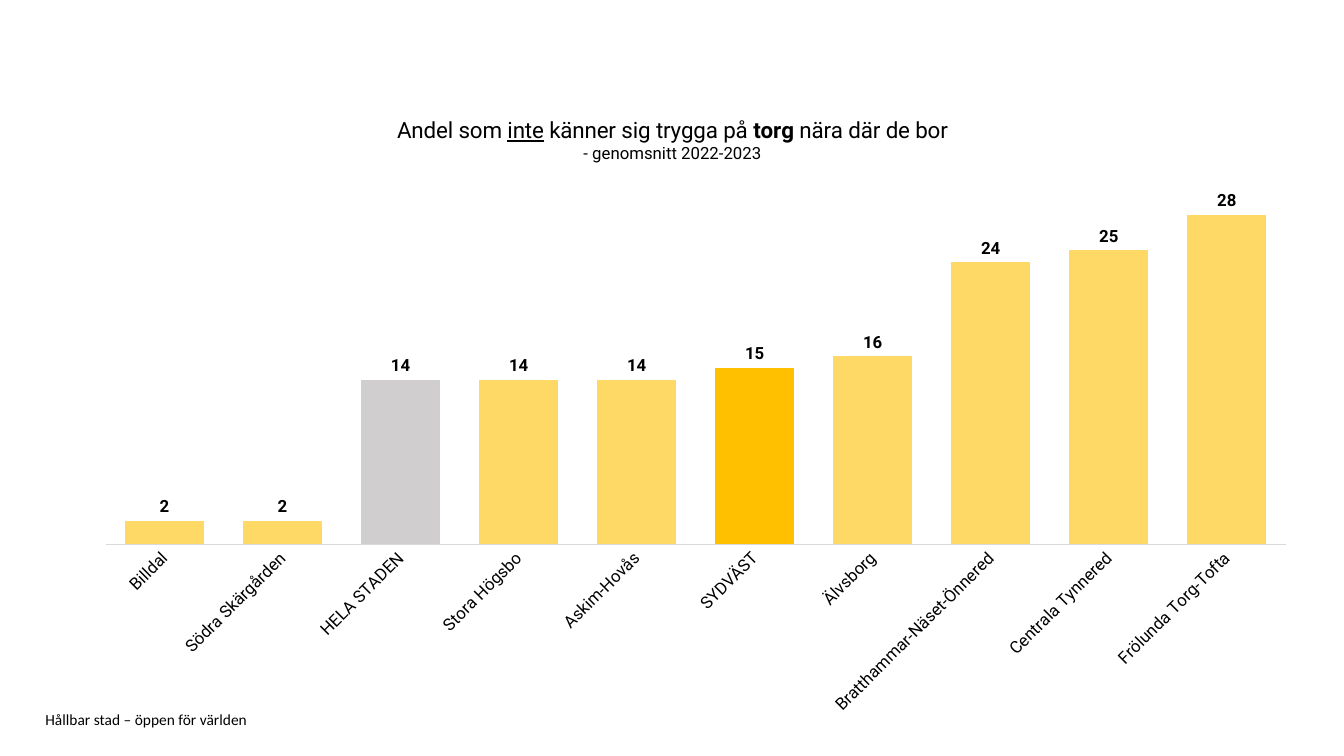
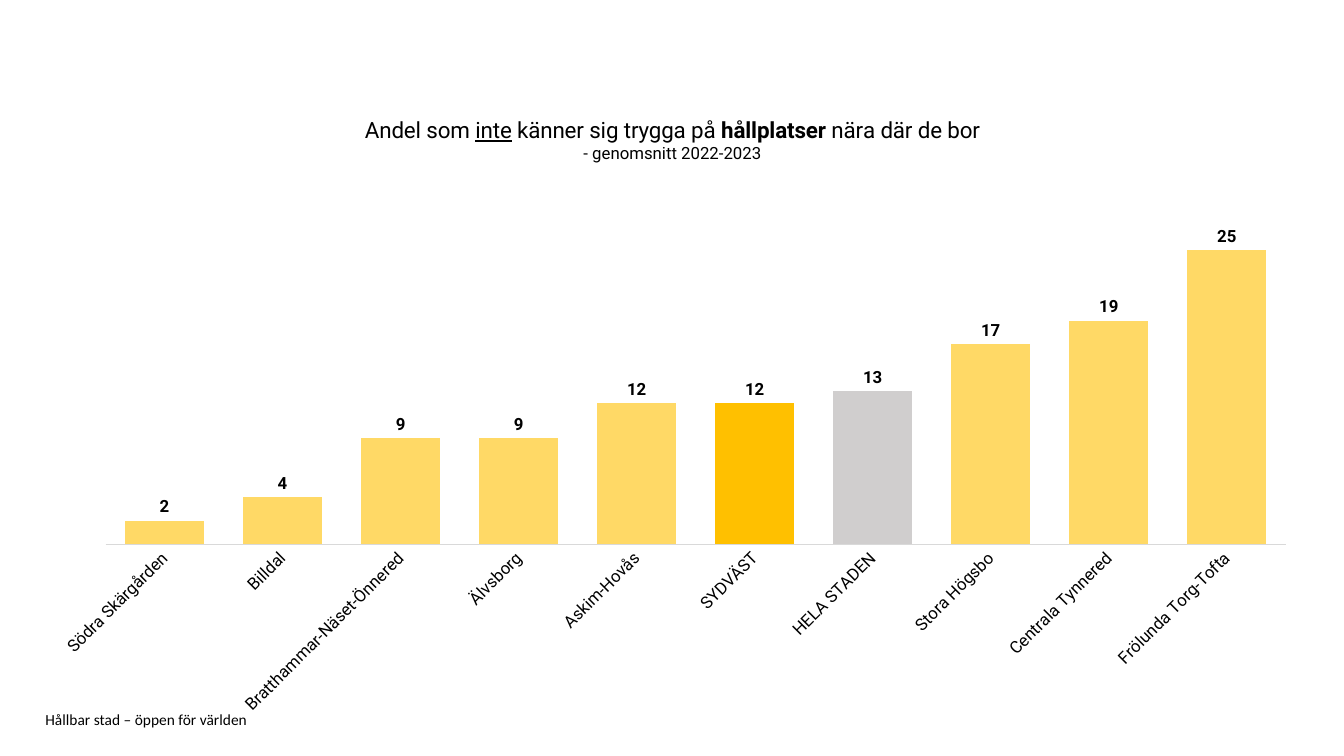
from lxml.etree import SubElement
from pptx import Presentation
from pptx.chart.data import CategoryChartData
from pptx.dml.color import RGBColor
from pptx.enum.chart import XL_CHART_TYPE, XL_LABEL_POSITION, XL_TICK_MARK
from pptx.enum.text import MSO_ANCHOR
from pptx.oxml.ns import qn
from pptx.util import Inches, Pt

COLORS = {"text": "000000", "axis": "D9D9D9", "area": "FFD966",
          "SYDVÄST": "FFC000", "HELA STADEN": "D0CECE"}
CHART_FONT = "Roboto"
FOOTER = "Hållbar stad – öppen för världen"
PERIOD = "- genomsnitt 2022-2023"
CHART_BOX = (0.45, 0.95, 12.44, 6.26)
PLOT_BOX = (0.6, 0.95, 11.7, 3.5)
FOOTER_BOX = (0.45, 7.06, 9.45, 0.16)

SLIDES = [
    ("torg", [("Billdal", 2), ("Södra Skärgården", 2), ("HELA STADEN", 14),
              ("Stora Högsbo", 14), ("Askim-Hovås", 14), ("SYDVÄST", 15),
              ("Älvsborg", 16), ("Bratthammar-Näset-Önnered", 24),
              ("Centrala Tynnered", 25), ("Frölunda Torg-Tofta", 28)]),
    ("hållplatser", [("Södra Skärgården", 2), ("Billdal", 4),
                     ("Bratthammar-Näset-Önnered", 9), ("Älvsborg", 9),
                     ("Askim-Hovås", 12), ("SYDVÄST", 12), ("HELA STADEN", 13),
                     ("Stora Högsbo", 17), ("Centrala Tynnered", 19),
                     ("Frölunda Torg-Tofta", 25)]),
]


def color(name):
    """Return a named colour."""
    return RGBColor.from_string(COLORS[name])


def style_font(font, size, bold=False, name=CHART_FONT):
    """Apply the shared text look to a font."""
    font.name, font.size, font.bold = name, Pt(size), bold
    font.color.rgb = color("text")


def add_footer(s, box):
    """Place the footer line in the given box."""
    tf = s.shapes.add_textbox(*map(Inches, box)).text_frame
    tf.word_wrap = True
    tf.vertical_anchor = MSO_ANCHOR.MIDDLE
    tf.margin_left = tf.margin_top = tf.margin_right = tf.margin_bottom = 0
    r = tf.paragraphs[0].add_run()
    r.text = FOOTER
    style_font(r.font, 11, name="Calibri")


def title_runs(place):
    """Return the runs of the title's first line as text, bold, underline."""
    return [("Andel som ", False, False), ("inte", False, True),
            (" känner sig trygga på ", False, False), (place, True, False),
            (" nära där de bor", False, False)]


def write_title(chart, place):
    """Write the two-line chart title."""
    tf = chart.chart_title.text_frame
    chart.chart_title.include_in_layout = False
    lines = [(tf.paragraphs[0], 16, title_runs(place)),
             (tf.add_paragraph(), 12, [(PERIOD, False, False)])]
    for p, size, runs in lines:
        style_font(p.font, size)
        for text, bold, underline in runs:
            r = p.add_run()
            r.text = text
            style_font(r.font, size, bold)
            r.font.underline = underline


def set_plot_layout(chart, box, size):
    """Fix the inner plot area at a box given in inches within the chart."""
    area = chart._chartSpace.chart.plotArea
    for old in area.findall(qn("c:layout")):
        area.remove(old)
    layout = area.makeelement(qn("c:layout"), {})
    area.insert(0, layout)
    manual = SubElement(layout, qn("c:manualLayout"))
    shares = [round(v / total, 3) for v, total in zip(box, size * 2)]
    entries = [("layoutTarget", "inner"), ("xMode", "edge"), ("yMode", "edge"),
               *zip("xywh", shares)]
    for tag, value in entries:
        SubElement(manual, qn(f"c:{tag}")).set("val", str(value))


def style_axes(chart):
    """Hide the value axis and slant the category labels."""
    value = chart.value_axis
    value.minimum_scale, value.maximum_scale = 0, 30
    value.has_major_gridlines = False
    value.visible = False
    cat = chart.category_axis
    cat.major_tick_mark = cat.minor_tick_mark = XL_TICK_MARK.NONE
    cat.format.line.color.rgb = color("axis")
    cat.format.line.width = Pt(0.75)
    style_font(cat.tick_labels.font, 12)
    body = cat._element.find(qn("c:txPr")).find(qn("a:bodyPr"))
    body.set("rot", str(-45 * 60000))
    body.set("vert", "horz")


def style_bars(plot, names):
    """Colour the bars, mark the two averages and label the values."""
    plot.gap_width = 50
    plot.vary_by_categories = False
    series = plot.series[0]
    series.invert_if_negative = False
    series.format.fill.solid()
    series.format.fill.fore_color.rgb = color("area")
    for i, name in enumerate(names):
        if name in COLORS:
            fill = series.points[i].format.fill
            fill.solid()
            fill.fore_color.rgb = color(name)
    labels = series.data_labels
    labels.show_value = True
    labels.position = XL_LABEL_POSITION.OUTSIDE_END
    labels.number_format, labels.number_format_is_linked = "0", False
    style_font(labels.font, 12, bold=True)


def add_share_chart(s, box, place, rows):
    """Place the column chart of unsafe shares in the given box."""
    names, values = zip(*rows)
    data = CategoryChartData(number_format="0")
    data.categories = names
    line = "".join(text for text, _, _ in title_runs(place))
    data.add_series(f"{line} {PERIOD}", values)
    chart = s.shapes.add_chart(XL_CHART_TYPE.COLUMN_CLUSTERED,
                               *map(Inches, box), data).chart
    chart.has_legend = False
    style_font(chart.font, 12)
    write_title(chart, place)
    set_plot_layout(chart, PLOT_BOX, box[2:])
    style_axes(chart)
    style_bars(chart.plots[0], names)


def main():
    """Build and save the presentation."""
    prs = Presentation()
    prs.slide_width, prs.slide_height = Inches(13.33), Inches(7.5)
    for place, rows in SLIDES:
        s = prs.slides.add_slide(prs.slide_layouts[6])
        add_footer(s, FOOTER_BOX)
        add_share_chart(s, CHART_BOX, place, rows)
    prs.save("out.pptx")


if __name__ == "__main__":
    main()
